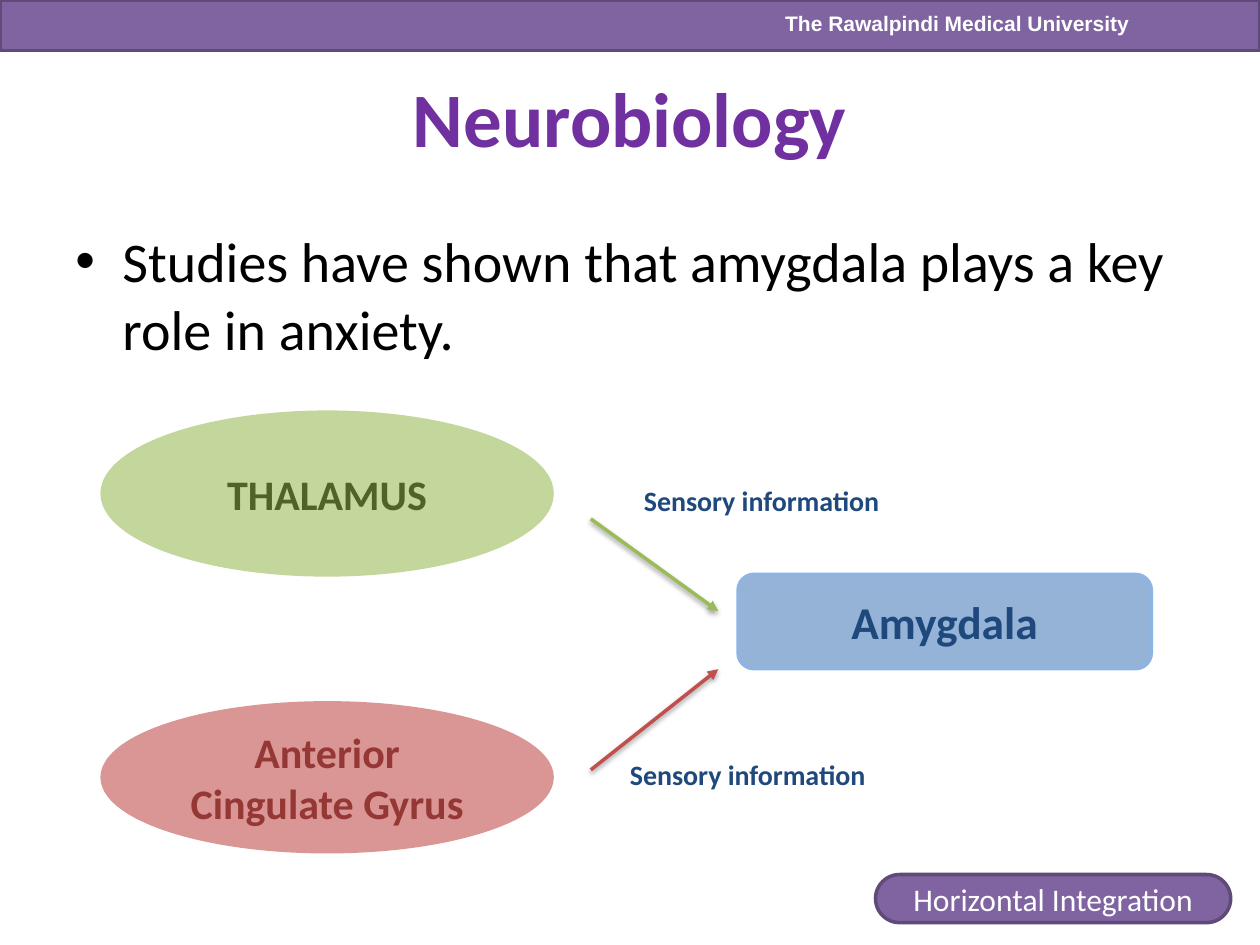
from lxml import etree
from pptx import Presentation
from pptx import util as u
from pptx.dml.color import RGBColor
from pptx.enum import shapes, text
from pptx.oxml import parse_xml
from pptx.oxml.ns import nsdecls, qn


def color(hex_value):
    return RGBColor.from_string(hex_value)


def write(shape, words, size, ink, bold=False, font="Calibri", align="LEFT",
          anchor="TOP", wrap=True, bullet=None):
    frame = shape.text_frame
    frame.word_wrap = wrap
    frame.vertical_anchor = getattr(text.MSO_ANCHOR, anchor)
    paragraph = frame.paragraphs[0]
    paragraph.text = words
    paragraph.alignment = getattr(text.PP_ALIGN, align)
    if bullet:
        properties = paragraph._p.get_or_add_pPr()
        properties.set("marL", str(u.Cm(0.95)))
        properties.set("indent", str(u.Cm(-0.95)))
        etree.SubElement(properties, qn("a:buFont")).set("typeface", "Arial")
        etree.SubElement(properties, qn("a:buChar")).set("char", bullet)
    for run in paragraph.runs:
        run.font.name = font
        run.font.size = u.Pt(size)
        run.font.bold = bold
        run.font.color.rgb = color(ink)


deck = Presentation()
deck.slide_width, deck.slide_height = u.Cm(25.4), u.Cm(19.05)
slide = deck.slides.add_slide(deck.slide_layouts[6])
canvas = slide.shapes

blocks = [
    ("RECTANGLE", (0, 0, 25.4, 1.02), "8064A2", "5F4A78", "", 18, "FFFFFF", False),
    ("ROUNDED_RECTANGLE", (14.88, 11.58, 8.33, 1.9), "95B3D7", "8EB4E3",
     "Amygdala", 26, "1F497D", True),
    ("OVAL", (2.06, 8.31, 9.07, 3.28), "C3D69B", "C3D69B",
     "THALAMUS", 24, "4F6228", True),
    ("OVAL", (2.06, 14.17, 9.07, 3), "D99694", "D99694",
     "Anterior Cingulate Gyrus", 24, "953735", True),
    ("ROUNDED_RECTANGLE", (17.65, 17.63, 7.16, 0.97), "8064A2", "5F4A78",
     "Horizontal Integration", 18, "FFFFFF", False),
]
for preset, box, fill, outline, words, size, ink, bold in blocks:
    block = canvas.add_shape(getattr(shapes.MSO_SHAPE, preset), *map(u.Cm, box))
    block.shadow.inherit = False
    block.fill.solid()
    block.fill.fore_color.rgb = color(fill)
    block.line.color.rgb = color(outline)
    block.line.width = u.Pt(2)
    if words:
        write(block, words, size, ink, bold=bold, align="CENTER", anchor="MIDDLE")
integration = block
integration.adjustments[0] = 0.5

sensory = dict(words="Sensory information", size=16, ink="1F497D", bold=True)
captions = [
    ((15.54, 0.08, 7.52, 0.76),
     dict(words="The Rawalpindi Medical University", size=12, ink="FFFFFF",
          bold=True, font="Arial", align="CENTER", wrap=False)),
    ((1.27, 0.76, 22.86, 3.18),
     dict(words="Neurobiology", size=44, ink="7030A0", bold=True,
          align="CENTER", anchor="MIDDLE")),
    ((1.27, 4.45, 22.86, 12.57),
     dict(words="Studies have shown that amygdala plays a key role in anxiety.",
          size=32, ink="000000", bullet="•")),
    ((12.73, 9.63, 7.87, 0.94), sensory),
    ((12.45, 15.14, 5.49, 0.94), sensory),
]
for box, wording in captions:
    write(canvas.add_textbox(*map(u.Cm, box)), **wording)

pathways = [
    ((11.91, 10.46, 14.48, 12.32), "9BBB59"),
    ((11.91, 15.52, 14.48, 13.49), "C0504D"),
]
for ends, ink in pathways:
    pathway = canvas.add_connector(shapes.MSO_CONNECTOR.STRAIGHT, *map(u.Cm, ends))
    pathway.line.color.rgb = color(ink)
    pathway.line.width = u.Pt(2)
    etree.SubElement(pathway.line._get_or_add_ln(), qn("a:tailEnd")).set("type", "triangle")
    pathway._element.spPr.append(parse_xml(
        f'<a:effectLst {nsdecls("a")}>'
        f'<a:outerShdw blurRad="{u.Pt(3.1)}" dist="{u.Pt(1.6)}" dir="5400000" rotWithShape="0">'
        '<a:srgbClr val="000000"><a:alpha val="38000"/></a:srgbClr>'
        '</a:outerShdw></a:effectLst>'))

deck.save("out.pptx")
